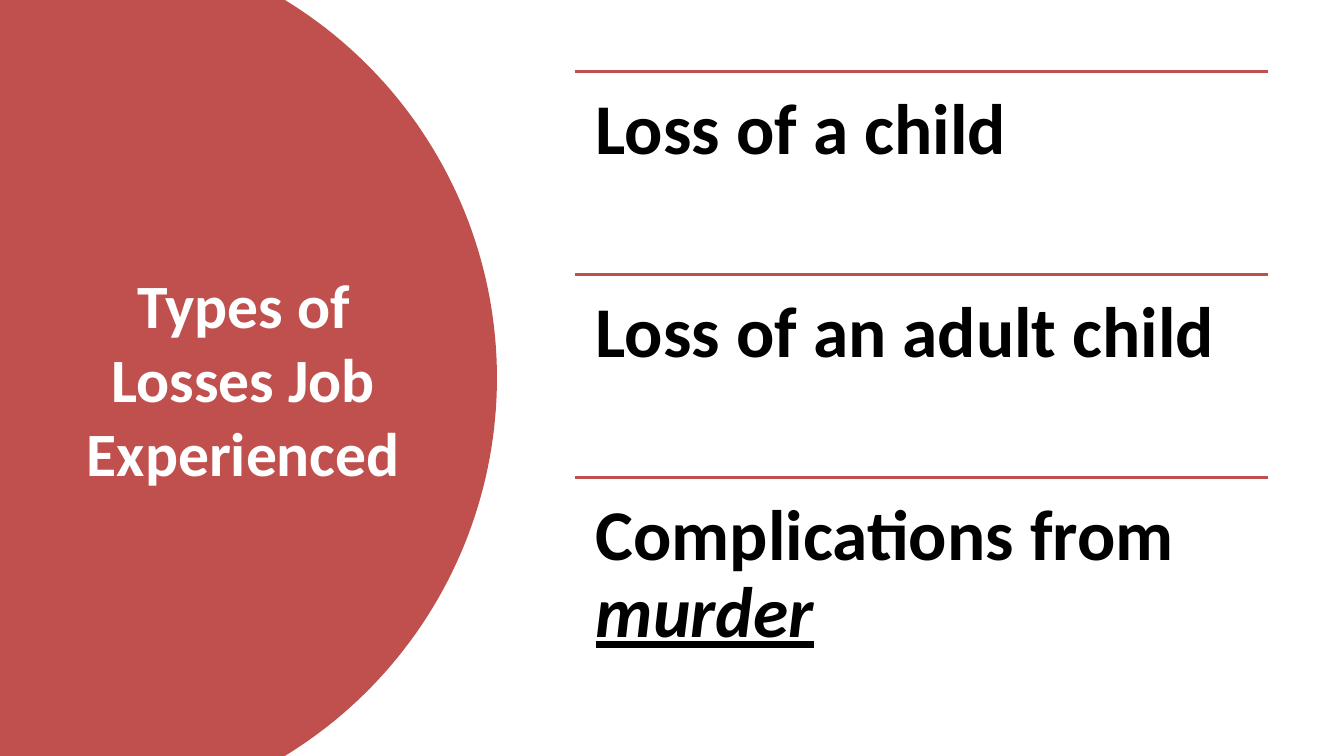
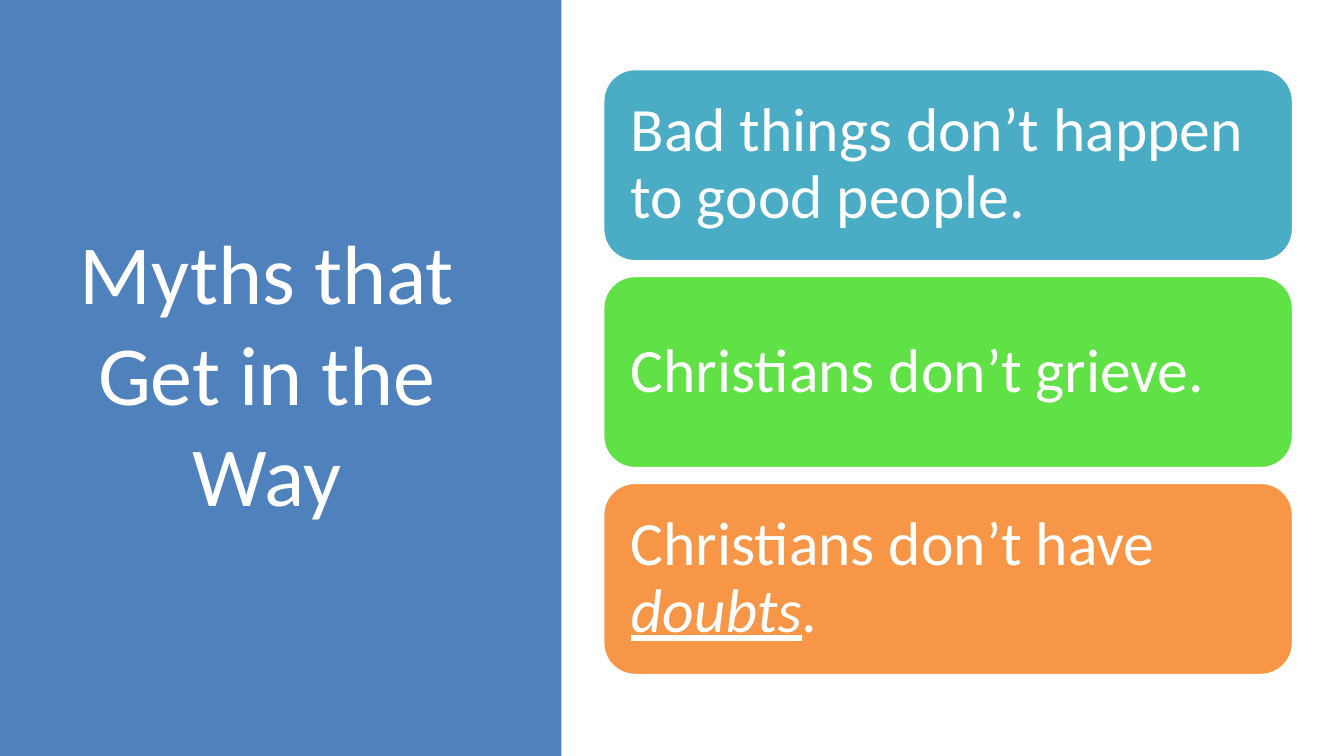
from math import asin, cos, sin

from lxml.etree import SubElement
from pptx import Presentation
from pptx.dml.color import RGBColor as RGB
from pptx.enum.shapes import MSO_CONNECTOR as LINK, MSO_SHAPE as SHAPE
from pptx.enum.text import MSO_ANCHOR as ANCHOR, PP_ALIGN as ALIGN
from pptx.oxml.ns import qn
from pptx.util import Pt

# Each item is a list of (text, stressed) runs
LOSSES = {
    "title": "Types of Losses Job Experienced",
    "items": [
        [("Loss of a child", False)],
        [("Loss of an adult child", False)],
        [("Complications from ", False), ("murder", True)],
    ],
}
MYTHS = {
    "title": "Myths that Get in the Way",
    "items": [
        ("teal", [("Bad things don’t happen to good people.", False)]),
        ("green", [("Christians don’t grieve.", False)]),
        ("orange", [("Christians don’t have ", False), ("doubts", True),
                    (".", False)]),
    ],
}
COLORS = {
    "red": "C0504D", "blue": "4F81BD", "teal": "4BACC6", "green": "60E146",
    "orange": "F79646", "white": "FFFFFF", "black": "000000",
}
FONT = "Calibri"
WIDE, HIGH = 960, 540


def color(name):
    return RGB.from_string(COLORS[name])


def paint(shape, fill, edge=None):
    shape.shadow.inherit = False
    shape.fill.solid()
    shape.fill.fore_color.rgb = color(fill)
    if edge:
        shape.line.color.rgb = color(edge)
        shape.line.width = Pt(2)
    else:
        shape.line.fill.background()


def write(shape, runs, size, ink, bold=False, align=ALIGN.LEFT,
          anchor=ANCHOR.MIDDLE, inset=None, pitch=None):
    """Fill a shape with one paragraph; stressed runs are italic, underlined."""
    frame = shape.text_frame
    frame.word_wrap = True
    frame.vertical_anchor = anchor
    if inset is not None:
        frame.margin_left = frame.margin_right = Pt(inset)
        frame.margin_top = frame.margin_bottom = Pt(inset)
    para = frame.paragraphs[0]
    para.alignment = align
    if pitch:
        para.line_spacing = pitch
    for text, stress in runs:
        run = para.add_run()
        run.text = text
        font = run.font
        font.name, font.size, font.bold = FONT, Pt(size), bold
        font.color.rgb = color(ink)
        if stress:
            font.italic = font.underline = True


def add_box(slide, *box):
    return slide.shapes.add_textbox(*map(Pt, box))


def add_title(slide, text, box, size, bold=False):
    write(add_box(slide, *box), [(text, False)], size, "white", bold,
          ALIGN.CENTER)


def add_rule(slide, left, top, width):
    rule = slide.shapes.add_connector(
        LINK.STRAIGHT, Pt(left), Pt(top), Pt(left + width), Pt(top))
    rule.line.color.rgb = color("red")
    rule.line.width = Pt(2)
    SubElement(rule._element.spPr, qn("a:effectLst"))


def add_bulge(slide, edge, tip, steps=90):
    """Draw a panel whose right side is an arc from edge out to tip."""
    half, rise = HIGH / 2, tip - edge
    radius = (rise ** 2 + half ** 2) / (2 * rise)
    sweep = asin(half / radius)
    turns = [sweep * (2 * i / steps - 1) for i in range(steps + 1)]
    arc = [(Pt(tip - radius + radius * cos(t)), Pt(half + radius * sin(t)))
           for t in turns]
    path = slide.shapes.build_freeform(0, 0)
    path.add_line_segments(arc + [(0, Pt(HIGH))], close=True)
    paint(path.convert_to_shape(), "red")


def draw_losses(slide):
    add_bulge(slide, edge=203.5, tip=355)
    add_title(slide, LOSSES["title"], (42, 50.5, 264, 438.5), 44, bold=True)
    left, top, width, step = 410.5, 51, 495, 145
    for i, runs in enumerate(LOSSES["items"]):
        y = top + i * step
        add_rule(slide, left, y, width)
        write(add_box(slide, left, y, width, step), runs, 51, "black",
              bold=True, anchor=ANCHOR.TOP, inset=15, pitch=0.9)


def draw_myths(slide):
    panel = slide.shapes.add_shape(SHAPE.RECTANGLE, 0, 0, Pt(401), Pt(HIGH))
    paint(panel, "blue")
    add_title(slide, MYTHS["title"], (41, 49, 299.5, 433.5), 60)
    left, top, width, height, gap = 430.75, 49.25, 493, 137.5, 10.25
    for i, (fill, runs) in enumerate(MYTHS["items"]):
        y = top + i * (height + gap)
        card = slide.shapes.add_shape(
            SHAPE.ROUNDED_RECTANGLE, *map(Pt, (left, y, width, height)))
        paint(card, fill, "white")
        write(card, runs, 44, "white", inset=13, pitch=0.9)


def main():
    deck = Presentation()
    deck.slide_width, deck.slide_height = Pt(WIDE), Pt(HIGH)
    for draw in (draw_losses, draw_myths):
        draw(deck.slides.add_slide(deck.slide_layouts[6]))
    deck.save("out.pptx")


if __name__ == "__main__":
    main()
